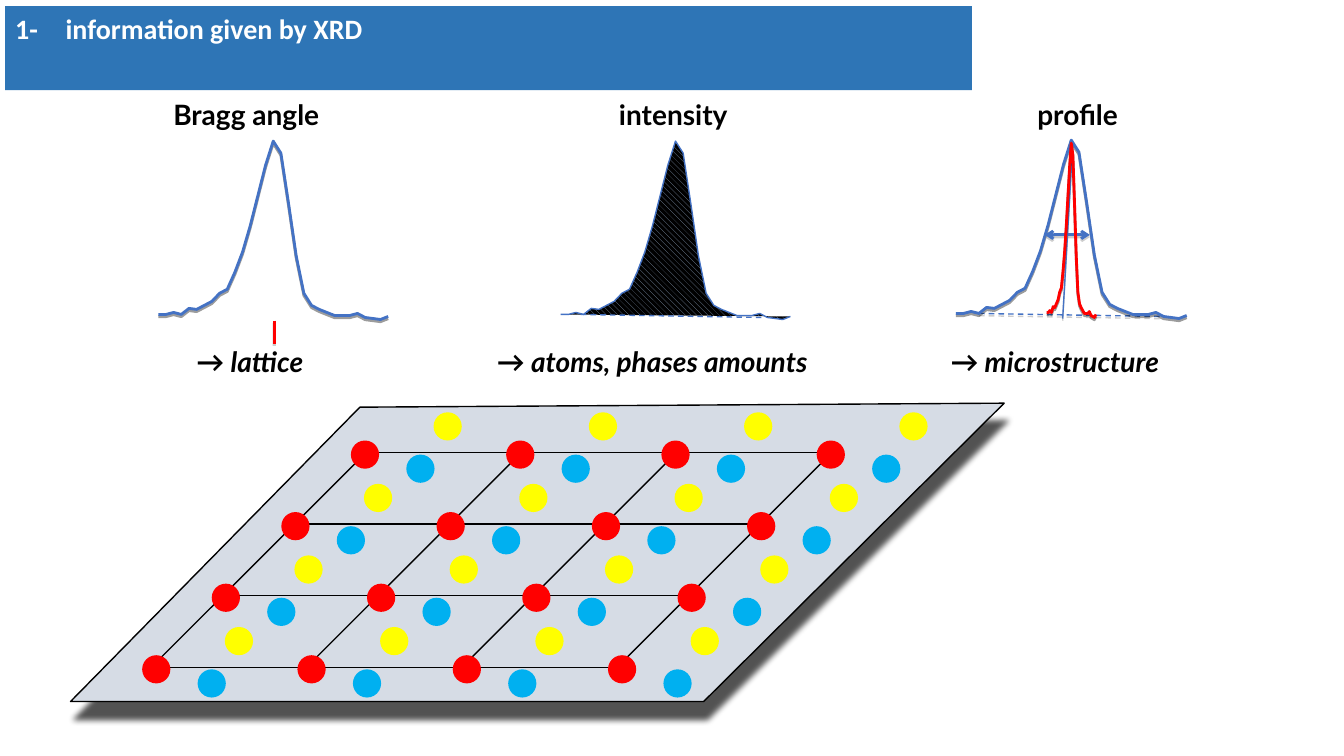
from dataclasses import dataclass
from itertools import product
from typing import Optional

from lxml.etree import SubElement
from pptx import Presentation
from pptx.dml.color import RGBColor
from pptx.enum.dml import MSO_LINE, MSO_PATTERN
from pptx.enum.shapes import MSO_CONNECTOR, MSO_SHAPE
from pptx.enum.text import MSO_ANCHOR, MSO_AUTO_SIZE, PP_ALIGN
from pptx.oxml.ns import qn
from pptx.util import Inches, Pt

# The slide is a grid of 13.33 columns by 7.5 rows.
COLUMNS, ROWS = 13.33, 7.5
WIDTH, HEIGHT = Inches(COLUMNS), Inches(ROWS)

BLUE, BANNER, SHEET = "4472C4", "2E75B6", "D6DCE5"
RED, YELLOW, CYAN = "FF0000", "FFFF00", "00B0F0"
BLACK, WHITE, HATCH = "000000", "FFFFFF", "8497B0"

LATTICE_SIZE = 4
ATOM_DIAMETER = 0.28
LABEL_HEIGHT = 0.44
# Depth below the summit at equal steps across a diffraction peak
PEAK_DEPTHS = (
    1.72, 1.72, 1.70, 1.72, 1.66, 1.67, 1.63, 1.59, 1.51, 1.47, 1.30,
    1.10, 0.84, 0.54, 0.24, 0, 0.12, 0.62, 1.14, 1.51, 1.63, 1.67,
    1.70, 1.73, 1.73, 1.73, 1.71, 1.75, 1.76, 1.77, 1.74,
)

Point = tuple[float, float]


@dataclass(frozen=True)
class Shadow:
    color: str
    opacity: int
    blur: float
    distance: float
    angle: int


@dataclass(frozen=True)
class Label:
    text: str
    left: float
    top: float
    width: float
    italic: bool = False


@dataclass(frozen=True)
class Peak:
    left: float
    top: float
    width: float
    height: float
    color: str = BLUE
    weight: float = 2
    hatched: bool = False
    shadow: Optional[Shadow] = None


@dataclass(frozen=True)
class Stroke:
    start: Point
    end: Point
    color: str = BLUE
    weight: float = 1
    dashed: bool = False
    arrows: bool = False
    shadow: Optional[Shadow] = None


@dataclass(frozen=True)
class Lattice:
    left: float
    top: float
    step: float
    slant: float
    row_height: float

    def node(self, column: int, row: int) -> Point:
        return (self.left + column * self.step - row * self.slant,
                self.top + row * self.row_height)


@dataclass(frozen=True)
class Atom:
    color: str
    right: float
    down: float


CURVE_SHADOW = Shadow(BLACK, 38, 0, 1.6, 90)
LINE_SHADOW = Shadow("808080", 38, 0, 1.6, 90)
SHEET_SHADOW = Shadow(BLACK, 67, 4, 13, 80)

SHEET_CORNERS = [(3.57, 4.04), (0.7, 6.96), (6.98, 6.96), (9.96, 4)]
LABELS = (
    Label("Bragg angle", 1.62, 0.92, 1.82),
    Label("intensity", 6.04, 0.92, 1.35),
    Label("profile", 10.19, 0.92, 1.06),
    Label("→ lattice", 1.85, 3.37, 1.37, italic=True),
    Label("→ atoms, phases amounts", 4.83, 3.37, 3.83, italic=True),
    Label("→ microstructure", 9.33, 3.37, 2.54, italic=True),
)
BROAD_PEAK = Peak(9.48, 1.39, 2.29, 1.77, shadow=CURVE_SHADOW)
NARROW_PEAK = Peak(10.38, 1.42, 0.49, 1.73, color=RED, shadow=CURVE_SHADOW)
ANGLE_PEAK = Peak(1.57, 1.4, 2.28, 1.77, shadow=CURVE_SHADOW)
INTENSITY_PEAK = Peak(5.56, 1.4, 2.28, 1.77, weight=1, hatched=True)

PEAK_AXIS = Stroke((10.64, 1.42), (10.54, 3.16), shadow=LINE_SHADOW)
PROFILE_BASE = Stroke((9.71, 3.11), (11.54, 3.14), dashed=True, shadow=LINE_SHADOW)
PEAK_WIDTH = Stroke((10.36, 2.33), (10.81, 2.33), weight=2, arrows=True, shadow=LINE_SHADOW)
ANGLE_MARK = Stroke((2.72, 3.18), (2.72, 3.41), RED, 2.25, shadow=LINE_SHADOW)
INTENSITY_BASE = Stroke((5.76, 3.12), (7.59, 3.15), dashed=True)

CELL_LINES = Lattice(3.63, 4.49, 1.54, 0.71, 0.71)
ATOM_SITES = Lattice(3.62, 4.51, 1.54, 0.69, 0.71)
ATOMS = (Atom(RED, 0, 0), Atom(YELLOW, 0.82, -0.28), Atom(CYAN, 0.55, 0.14))


def across(columns: float) -> int:
    return round(WIDTH * columns / COLUMNS)


def down(rows: float) -> int:
    return round(HEIGHT * rows / ROWS)


def rgb(color: str) -> RGBColor:
    return RGBColor.from_string(color)


def set_shadow(shape, shadow: Optional[Shadow]) -> None:
    """Replace the theme's effects by one shadow, or by none."""
    effects = SubElement(shape._element.spPr, qn("a:effectLst"))
    if shadow:
        outer = SubElement(
            effects, qn("a:outerShdw"), blurRad=str(Pt(shadow.blur)),
            dist=str(Pt(shadow.distance)), dir=str(shadow.angle * 60000),
            algn="ctr", rotWithShape="0")
        color = SubElement(outer, qn("a:srgbClr"), val=shadow.color)
        SubElement(color, qn("a:alpha"), val=str(shadow.opacity * 1000))


def set_line(shape, color: str, weight: float) -> None:
    shape.line.color.rgb = rgb(color)
    shape.line.width = Pt(weight)


def write_text(text_frame, text: str, *, font: str = "Lato", size: float = 20,
               color: str = BLACK, bold: bool = True, italic: bool = False) -> None:
    paragraph = text_frame.paragraphs[0]
    paragraph.alignment = PP_ALIGN.LEFT
    run = paragraph.add_run()
    run.text = text
    run.font.name = font
    run.font.size = Pt(size)
    run.font.bold = bold
    run.font.italic = italic
    run.font.color.rgb = rgb(color)


def add_title(slide, text: str) -> None:
    title = slide.shapes.title
    title.left, title.top = across(0.05), down(0.06)
    title.width, title.height = across(9.59), down(LABEL_HEIGHT)
    title.fill.solid()
    title.fill.fore_color.rgb = rgb(BANNER)
    title.text_frame.auto_size = MSO_AUTO_SIZE.SHAPE_TO_FIT_TEXT
    title.text_frame.vertical_anchor = MSO_ANCHOR.TOP
    write_text(title.text_frame, text, font="Calibri", color=WHITE)


def add_label(slide, label: Label) -> None:
    box = slide.shapes.add_textbox(across(label.left), down(label.top),
                                   across(label.width), down(LABEL_HEIGHT))
    box.text_frame.word_wrap = False
    box.text_frame.auto_size = MSO_AUTO_SIZE.SHAPE_TO_FIT_TEXT
    write_text(box.text_frame, label.text, italic=label.italic)


def add_outline(slide, points: list[Point], closed: bool):
    start, *others = [(across(x), down(y)) for x, y in points]
    builder = slide.shapes.build_freeform(*start)
    builder.add_line_segments(others, close=closed)
    return builder.convert_to_shape()


def add_sheet(slide) -> None:
    sheet = add_outline(slide, SHEET_CORNERS, closed=True)
    sheet.fill.solid()
    sheet.fill.fore_color.rgb = rgb(SHEET)
    set_line(sheet, BLACK, 1)
    set_shadow(sheet, SHEET_SHADOW)


def add_peak(slide, peak: Peak) -> None:
    step = peak.width / (len(PEAK_DEPTHS) - 1)
    scale = peak.height / max(PEAK_DEPTHS)
    points = [(peak.left + index * step, peak.top + depth * scale)
              for index, depth in enumerate(PEAK_DEPTHS)]
    curve = add_outline(slide, points, closed=False)
    if peak.hatched:
        curve.fill.patterned()
        curve.fill.pattern = MSO_PATTERN.WIDE_DOWNWARD_DIAGONAL
        curve.fill.fore_color.rgb = rgb(HATCH)
        curve.fill.back_color.rgb = rgb(BLACK)
    else:
        curve.fill.background()
    set_line(curve, peak.color, peak.weight)
    set_shadow(curve, peak.shadow)


def add_stroke(slide, stroke: Stroke) -> None:
    (x1, y1), (x2, y2) = stroke.start, stroke.end
    connector = slide.shapes.add_connector(
        MSO_CONNECTOR.STRAIGHT, across(x1), down(y1), across(x2), down(y2))
    set_line(connector, stroke.color, stroke.weight)
    if stroke.dashed:
        connector.line.dash_style = MSO_LINE.DASH
    if stroke.arrows:
        line = connector._element.spPr.find(qn("a:ln"))
        for end in ("a:headEnd", "a:tailEnd"):
            SubElement(line, qn(end), type="arrow")
    set_shadow(connector, stroke.shadow)


def add_cell_lines(slide) -> None:
    last = LATTICE_SIZE - 1
    for index in range(LATTICE_SIZE):
        for start, end in (((0, index), (last, index)), ((index, 0), (index, last))):
            add_stroke(slide, Stroke(CELL_LINES.node(*start), CELL_LINES.node(*end), BLACK))


def add_atoms(slide) -> None:
    for row, column, atom in product(range(LATTICE_SIZE), range(LATTICE_SIZE), ATOMS):
        x, y = ATOM_SITES.node(column, row)
        circle = slide.shapes.add_shape(
            MSO_SHAPE.OVAL, across(x + atom.right - ATOM_DIAMETER / 2),
            down(y + atom.down - ATOM_DIAMETER / 2),
            across(ATOM_DIAMETER), down(ATOM_DIAMETER))
        circle.fill.solid()
        circle.fill.fore_color.rgb = rgb(atom.color)
        circle.line.fill.background()
        circle.shadow.inherit = False


def main() -> None:
    presentation = Presentation()
    presentation.slide_width, presentation.slide_height = WIDTH, HEIGHT
    slide = presentation.slides.add_slide(presentation.slide_layouts.get_by_name("Title Only"))
    add_title(slide, "1-\tinformation given by XRD")
    for stroke in (PEAK_AXIS, PROFILE_BASE):
        add_stroke(slide, stroke)
    add_sheet(slide)
    add_peak(slide, BROAD_PEAK)
    add_stroke(slide, PEAK_WIDTH)
    for peak in (NARROW_PEAK, ANGLE_PEAK, INTENSITY_PEAK):
        add_peak(slide, peak)
    for stroke in (ANGLE_MARK, INTENSITY_BASE):
        add_stroke(slide, stroke)
    add_cell_lines(slide)
    add_atoms(slide)
    for label in LABELS:
        add_label(slide, label)
    presentation.save("out.pptx")


if __name__ == "__main__":
    main()
